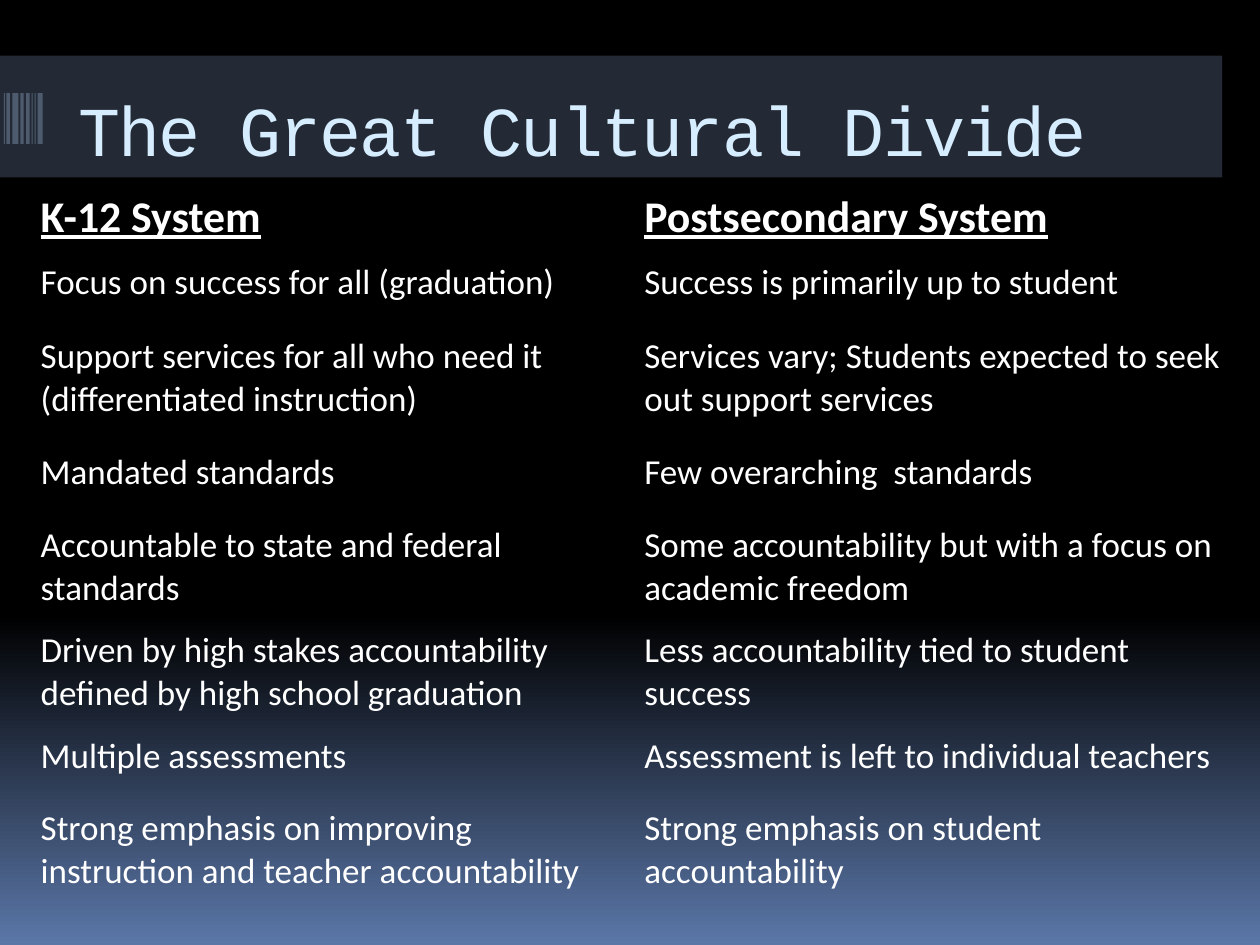
import copy
import pptx
import pptx.dml.color
import pptx.enum.shapes
import pptx.enum.text
import pptx.oxml.ns
import pptx.util

Cm = pptx.util.Cm
Pt = pptx.util.Pt

THEME = {
    "body_font": "Calibri", "title_font": "Courier New",
    "title_size": 40, "head_size": 25, "body_size": 20,
    "title": "D6ECFF", "text": "FFFFFF", "bars": "4E5B6F", "band": "586A86",
    "dark": "000000", "glow": "5B77A8",
}
TITLE = "The Great Cultural Divide"
COMPARISON = [
    ("K-12 System", "Postsecondary System"),
    ("Focus on success for all (graduation)", "Success is primarily up to student"),
    ("Support services for all who need it (differentiated instruction)",
     "Services vary; Students expected to seek out support services"),
    ("Mandated standards", "Few overarching  standards"),
    ("Accountable to state and federal standards",
     "Some accountability but with a focus on academic freedom"),
    ("Driven by high stakes accountability defined by high school graduation",
     "Less accountability tied to student success"),
    ("Multiple assessments", "Assessment is left to individual teachers"),
    ("Strong emphasis on improving instruction and teacher accountability",
     "Strong emphasis on student accountability"),
]
ROW_HEIGHTS = [1.55, 1.49, 2.35, 1.47, 2.12, 2.12, 1.47, 1.86]
COLUMN_WIDTH = 12.17
STRIPES = [(0.08, 0.02), (0.13, 0.07), (0.25, 0.12), (0.41, 0.07),
           (0.53, 0.07), (0.64, 0.02), (0.7, 0.02), (0.76, 0.1)]
INSETS = {"left": 0.18, "top": 0.1, "right": 0.18, "bottom": 0.1}


def color(name):
    return pptx.dml.color.RGBColor.from_string(THEME[name])


def paint_background(page):
    fill = page.background.fill
    fill.gradient()
    fill.gradient_angle = 270
    first, last = fill.gradient_stops
    first.position, first.color.rgb = 0, color("dark")
    last.position, last.color.rgb = 1, color("glow")
    stop = page.element.xpath(".//p:bg//a:gs")[0]
    middle = copy.deepcopy(stop)
    middle.set("pos", "65000")
    stop.addnext(middle)


def add_block(page, left, top, width, height, fill):
    block = page.shapes.add_shape(
        pptx.enum.shapes.MSO_SHAPE.RECTANGLE, Cm(left), Cm(top), Cm(width), Cm(height))
    block.shadow.inherit = False
    block.fill.solid()
    block.fill.fore_color.rgb = color(fill)
    block.line.fill.background()
    return block


def set_insets(holder):
    for side, gap in INSETS.items():
        setattr(holder, "margin_" + side, Cm(gap))


def add_span(para, text, font, size, fill, strong=False):
    span = para.add_run()
    span.text = text
    span.font.name = THEME[font]
    span.font.size = Pt(THEME[size])
    span.font.bold = span.font.underline = strong
    span.font.color.rgb = color(fill)
    return span


def add_banner(page):
    band = add_block(page, 0, 1.12, 24.64, 2.46, "band")
    tint = band.fill._xPr.find(".//" + pptx.oxml.ns.qn("a:srgbClr"))
    tint.makeelement
    alpha = pptx.oxml.parse_xml("<a:alpha %s val='40000'/>" % pptx.oxml.ns.nsdecls("a"))
    tint.append(alpha)
    for left, width in STRIPES:
        add_block(page, left, 1.88, width, 1.02, "bars")
    box = page.shapes.add_textbox(Cm(1.4), Cm(1.42), Cm(21.59), Cm(2.54))
    frame = box.text_frame
    frame.word_wrap = True
    frame.vertical_anchor = pptx.enum.text.MSO_ANCHOR.MIDDLE
    set_insets(frame)
    para = frame.paragraphs[0]
    para.line_spacing = 0.9
    span = add_span(para, TITLE, "title_font", "title_size", "title")
    span.font._element.set("spc", "-100")


def add_comparison(page):
    table = page.shapes.add_table(
        len(COMPARISON), 2, Cm(0.64), Cm(3.61),
        Cm(2 * COLUMN_WIDTH), Cm(sum(ROW_HEIGHTS))).table
    table.first_row = table.horz_banding = False
    for column in table.columns:
        column.width = Cm(COLUMN_WIDTH)
    for row, height in zip(table.rows, ROW_HEIGHTS):
        row.height = Cm(height)
    no_style = "{2D5ABB26-0587-4C30-8999-92F81FD0307C}"
    table._tbl.tblPr.find(pptx.oxml.ns.qn("a:tableStyleId")).text = no_style
    for r, texts in enumerate(COMPARISON):
        heading = r == 0
        for c, text in enumerate(texts):
            cell = table.cell(r, c)
            cell.fill.background()
            set_insets(cell)
            if heading:
                cell.vertical_anchor = pptx.enum.text.MSO_ANCHOR.MIDDLE
            size = "head_size" if heading else "body_size"
            add_span(cell.text_frame.paragraphs[0], text, "body_font", size, "text", heading)


def main():
    """Build the comparison slide and save it."""
    deck = pptx.Presentation()
    deck.slide_width, deck.slide_height = Cm(25.4), Cm(19.05)
    page = deck.slides.add_slide(deck.slide_layouts[6])
    paint_background(page)
    add_banner(page)
    add_comparison(page)
    deck.save("out.pptx")


if __name__ == "__main__":
    main()
